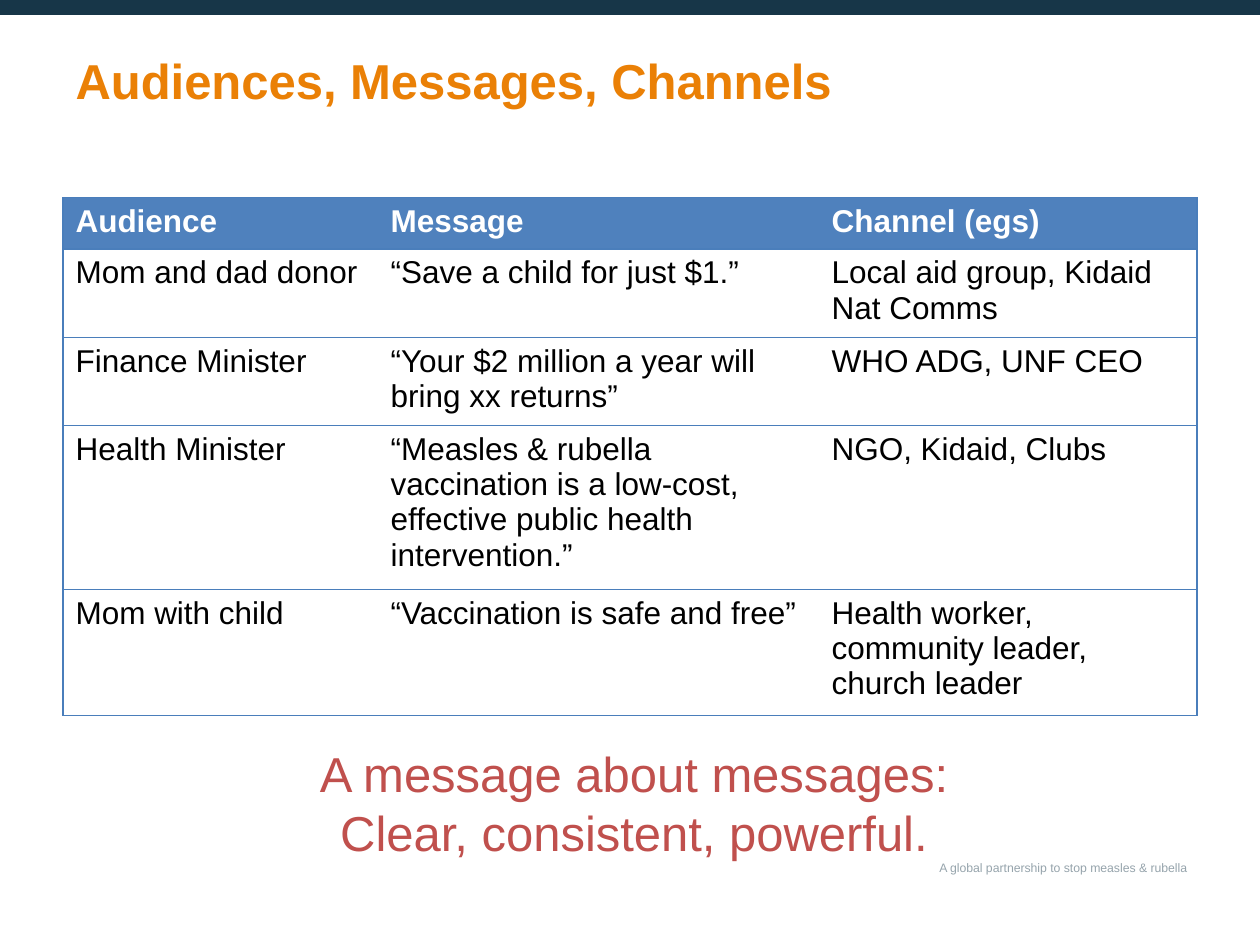
from pptx import Presentation
from pptx.dml.color import RGBColor
from pptx.enum.shapes import MSO_SHAPE as Shape
from pptx.enum.text import MSO_ANCHOR as Anchor, MSO_AUTO_SIZE as AutoSize, PP_ALIGN as Align
from pptx.oxml.ns import qn
from pptx.util import Cm, Pt
from lxml.etree import SubElement

WIDTH, HEIGHT = 25.4, 19.05
MARGIN = 1.27
FONT = "Arial"
NAVY, ORANGE, GREY, RED = "173648", "EA8006", "96A4AC", "C0504D"
BLUE, LINE, WHITE, BLACK = "4F81BD", "4A7EBB", "FFFFFF", "000000"

COLUMN_WIDTHS = [6.35, 8.89, 7.62]
ROW_HEIGHTS = [1.03, 1.67, 1.67, 3.1, 2.4]
ROWS = [
    ["Audience", "Message", "Channel (egs)"],
    ["Mom and dad donor", "“Save a child for just $1.”", "Local aid group, Kidaid Nat Comms"],
    ["Finance Minister", "“Your $2 million a year will bring xx returns”", "WHO ADG, UNF CEO"],
    ["Health Minister",
     "“Measles & rubella vaccination is a low-cost, effective public health intervention.”",
     "NGO, Kidaid, Clubs"],
    ["Mom with child", "“Vaccination is safe and free”",
     "Health worker, community leader, church leader"],
]


def color(value):
    return RGBColor.from_string(value)


def write(para, text, size, value, bold=False, align=Align.LEFT):
    para.alignment = align
    span = para.add_run()
    span.text = text
    font = span.font
    font.name, font.size, font.bold = FONT, Pt(size), bold
    font.color.rgb = color(value)


def add_text_box(page, left, top, width, height):
    box = page.shapes.add_textbox(Cm(left), Cm(top), Cm(width), Cm(height))
    box.text_frame.word_wrap = True
    return box.text_frame


def add_top_bar(page, width, height):
    bar = page.shapes.add_shape(Shape.RECTANGLE, 0, 0, Cm(width), Cm(height))
    bar.shadow.inherit = False
    bar.fill.solid()
    bar.fill.fore_color.rgb = color(NAVY)
    bar.line.fill.background()


def add_tagline(page, left, top, width, height):
    frame = add_text_box(page, left, top, width, height)
    frame.margin_left = frame.margin_top = frame.margin_bottom = 0
    frame.margin_right = Cm(0.2)
    write(frame.paragraphs[0], "A global partnership to stop measles & rubella", 7, GREY,
          align=Align.RIGHT)


def place_title(page, left, top, width, height):
    title = page.shapes.title
    title.left, title.top, title.width, title.height = map(Cm, (left, top, width, height))
    frame = title.text_frame
    frame.vertical_anchor = Anchor.TOP
    frame.auto_size = AutoSize.NONE
    write(frame.paragraphs[0], "Audiences, Messages, Channels", 28, ORANGE, bold=True)


def set_borders(cell, drawn):
    """Draw the named sides of a cell and clear the others."""
    properties = cell._tc.get_or_add_tcPr()
    for index, side in enumerate("LRTB"):
        border = SubElement(properties, qn(f"a:ln{side}"), w=str(Pt(0.75)))
        properties.insert(index, border)
        if side in drawn:
            fill = SubElement(border, qn("a:solidFill"))
            SubElement(fill, qn("a:srgbClr"), val=LINE)
        else:
            SubElement(border, qn("a:noFill"))


def add_audience_table(page, left, top):
    frame = page.shapes.add_table(len(ROWS), len(COLUMN_WIDTHS), Cm(left), Cm(top),
                                  Cm(sum(COLUMN_WIDTHS)), Cm(sum(ROW_HEIGHTS)))
    table = frame.table
    table.horz_banding = False
    for column, width in zip(table.columns, COLUMN_WIDTHS):
        column.width = Cm(width)
    for r, (texts, height) in enumerate(zip(ROWS, ROW_HEIGHTS)):
        table.rows[r].height = Cm(height)
        header = r == 0
        for c, text in enumerate(texts):
            cell = table.cell(r, c)
            write(cell.text_frame.paragraphs[0], text, 18, WHITE if header else BLACK, header)
            if header:
                cell.fill.solid()
                cell.fill.fore_color.rgb = color(BLUE)
            else:
                cell.fill.background()
            outer = "L" if c == 0 else "R" if c == len(texts) - 1 else ""
            set_borders(cell, "TB" + outer)


def add_closing_message(page, left, top, width, height):
    frame = add_text_box(page, left, top, width, height)
    lines = ["A message about messages:", "Clear, consistent, powerful."]
    for index, line in enumerate(lines):
        para = frame.add_paragraph() if index else frame.paragraphs[0]
        write(para, line, 28, RED, align=Align.CENTER)


def main():
    deck = Presentation()
    deck.slide_width, deck.slide_height = Cm(WIDTH), Cm(HEIGHT)
    page = deck.slides.add_slide(deck.slide_layouts[5])
    add_tagline(page, 18.24, 17.35, 5.89, 0.3)
    add_top_bar(page, WIDTH, 0.3)
    place_title(page, MARGIN, 0.89, 18.57, 3.1)
    add_audience_table(page, MARGIN, 3.99)
    add_closing_message(page, 5.72, 14.86, 14.12, 2.64)
    deck.save("out.pptx")


if __name__ == "__main__":
    main()
